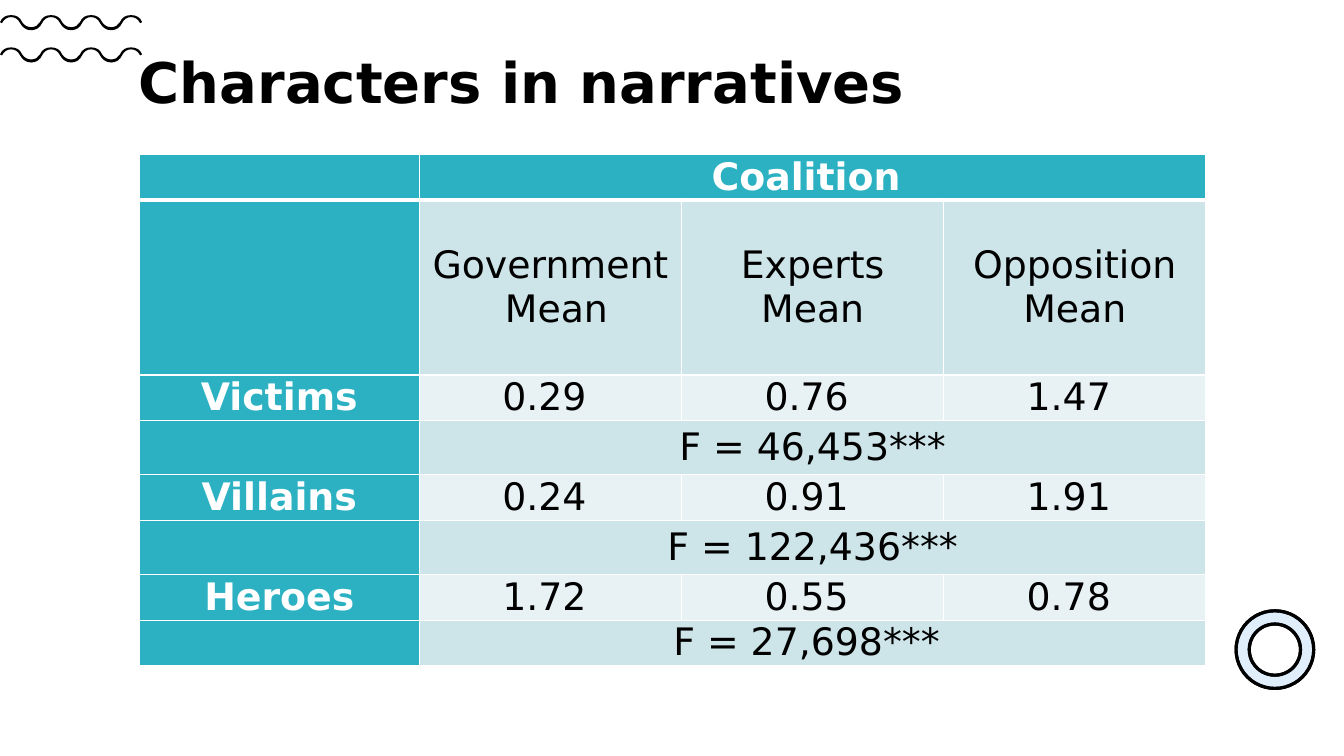
from lxml import etree
from pptx import Presentation
from pptx.dml.color import RGBColor
from pptx.enum.shapes import MSO_SHAPE
from pptx.enum.text import MSO_ANCHOR, PP_ALIGN
from pptx.oxml.ns import qn
from pptx.util import Inches, Pt

RECTANGLE, DONUT = MSO_SHAPE.RECTANGLE, MSO_SHAPE.DONUT
MIDDLE = MSO_ANCHOR.MIDDLE
CENTER = PP_ALIGN.CENTER

TITLE = "Characters in narratives"
GROUP_HEADING = "Coalition "
COALITIONS = ["Government\n Mean", "Experts\nMean", "Opposition\nMean"]
CHARACTERS = [
    ("Victims", ["0.29 ", "0.76 ", "1.47 "], "F = 46,453***"),
    ("Villains", ["0.24 ", "0.91 ", "1.91 "], "F = 122,436***"),
    ("Heroes", ["1.72 ", "0.55 ", "0.78 "], "F = 27,698*** "),
]

FONT = "DejaVu Sans"
WHITE, BLACK = "FFFFFF", "000000"
TEAL, BAND, PALE, RING_BLUE = "2CB1C3", "CDE4E9", "E8F2F5", "67A6EE"
TITLE_FORMAT = {"name": FONT, "size": Pt(40), "bold": True}
HEADING_FORMAT = {"name": FONT, "size": Pt(27), "bold": True}
BODY_FORMAT = {"name": FONT, "size": Pt(27), "bold": False}

SLIDE_SIZE = (13.33, 7.5)
TITLE_BOX = (1.28, 0.23, 11.5, 1.23)
TABLE_LEFT, TABLE_TOP = 1.38, 1.53
COLUMN_WIDTHS = [2.78, 2.6, 2.6, 2.6]
ROW_HEIGHTS = [0.43, 1.74, 0.43, 0.54, 0.43, 0.54, 0.43, 0.43]
RING_BOX = (12.26, 6.06, 0.77, 0.77)
RING_BAND = 0.17

WAVE_TOPS = [0.47, 0.15]
WAVE_REPEATS = 3
WAVE_PERIOD = (1.41 - 0.22) / WAVE_REPEATS
# One period of each edge: a start, then three Bézier points per quarter
UPPER_EDGE = [(0, 0.07), (0.02, 0.02), (0.06, 0), (0.11, 0),
              (0.16, 0), (0.2, 0.02), (0.22, 0.07),
              (0.24, 0.1), (0.27, 0.12), (0.31, 0.12),
              (0.35, 0.12), (0.38, 0.1)]
LOWER_EDGE = [(0.02, 0.08), (0.04, 0.04), (0.07, 0.02), (0.11, 0.02),
              (0.15, 0.02), (0.18, 0.04), (0.2, 0.08),
              (0.22, 0.12), (0.26, 0.15), (0.31, 0.15),
              (0.36, 0.15), (0.4, 0.12)]
CREST_POINTS = 7


def rgb(value):
    return RGBColor.from_string(value)


def paint(fill, color):
    fill.solid()
    fill.fore_color.rgb = rgb(color)


def write(frame, text, formats, color, **paragraph_formats):
    frame.text = text
    for paragraph in frame.paragraphs:
        for attribute, value in paragraph_formats.items():
            setattr(paragraph, attribute, value)
        for run in paragraph.runs:
            for attribute, value in formats.items():
                setattr(run.font, attribute, value)
            run.font.color.rgb = rgb(color)


def add_borders(cell, widths):
    """Draw white left, right, top and bottom borders of the given point widths."""
    properties = cell._tc.get_or_add_tcPr()
    for position, (side, width) in enumerate(zip("LRTB", widths)):
        border = etree.Element(qn(f"a:ln{side}"), w=str(Pt(width)))
        solid = etree.SubElement(border, qn("a:solidFill"))
        etree.SubElement(solid, qn("a:srgbClr"), val=WHITE)
        properties.insert(position, border)


def add_backdrop(slide):
    backdrop = slide.shapes.add_shape(RECTANGLE, 0, 0, *map(Inches, SLIDE_SIZE))
    backdrop.shadow.inherit = False
    paint(backdrop.fill, WHITE)
    backdrop.line.fill.background()


def add_title(slide):
    frame = slide.shapes.add_textbox(*map(Inches, TITLE_BOX)).text_frame
    frame.word_wrap = True
    frame.vertical_anchor = MIDDLE
    write(frame, TITLE, TITLE_FORMAT, BLACK, line_spacing=0.9)


def repeat_edge(edge, top):
    """Repeat one period of an edge and finish it with a last crest."""
    return [(Inches(x + repeat * WAVE_PERIOD), Inches(top + y))
            for repeat in range(WAVE_REPEATS + 1)
            for x, y in (edge if repeat < WAVE_REPEATS else edge[:CREST_POINTS])]


def join_curves(segments):
    """Turn every three straight segments into one cubic curve."""
    for first in range(0, len(segments), 3):
        triple = segments[first:first + 3]
        curve = etree.Element(qn("a:cubicBezTo"))
        triple[0].addprevious(curve)
        for segment in triple:
            curve.append(segment[0])
            segment.getparent().remove(segment)


def add_wave(slide, top):
    upper = repeat_edge(UPPER_EDGE, top)
    lower = repeat_edge(LOWER_EDGE, top)[::-1]
    builder = slide.shapes.build_freeform(*upper[0])
    builder.add_line_segments(upper[1:] + lower, close=True)
    wave = builder.convert_to_shape()
    segments = list(wave._element.iter(qn("a:lnTo")))
    end_cap = len(upper) - 1
    join_curves(segments[:end_cap])
    join_curves(segments[end_cap + 1:end_cap + len(lower)])
    wave.shadow.inherit = False
    paint(wave.fill, BLACK)
    wave.line.fill.background()


def add_ring(slide, color, opacity):
    ring = slide.shapes.add_shape(DONUT, *map(Inches, RING_BOX))
    ring.adjustments[0] = RING_BAND
    ring.shadow.inherit = False
    paint(ring.fill, color)
    if opacity < 100:
        tint = ring.fill._xPr.find(qn("a:solidFill"))[0]
        etree.SubElement(tint, qn("a:alpha"), val=str(opacity * 1000))
    ring.line.color.rgb = rgb(BLACK)
    ring.line.width = Pt(2.25)


def add_results(slide):
    rows = [["", GROUP_HEADING], ["", *COALITIONS]]
    for character, means, f_test in CHARACTERS:
        rows += [[character, *means], ["", f_test]]
    table = slide.shapes.add_table(
        len(rows), len(COLUMN_WIDTHS), Inches(TABLE_LEFT), Inches(TABLE_TOP),
        Inches(sum(COLUMN_WIDTHS)), Inches(sum(ROW_HEIGHTS))).table
    table.first_row = table.horz_banding = False
    for column, width in zip(table.columns, COLUMN_WIDTHS):
        column.width = Inches(width)
    for r, (texts, height) in enumerate(zip(rows, ROW_HEIGHTS)):
        table.rows[r].height = Inches(height)
        for c in range(len(COLUMN_WIDTHS)):
            cell = table.cell(r, c)
            heading = r == 0 or c == 0
            cell.margin_left = cell.margin_right = Inches(0.07)
            cell.margin_top = cell.margin_bottom = 0
            cell.vertical_anchor = MIDDLE
            paint(cell.fill, TEAL if heading else BAND if r % 2 else PALE)
            add_borders(cell, (1, 1, 1, 3 if r == 0 else 1))
            if c < len(texts):
                write(cell.text_frame, texts[c],
                      HEADING_FORMAT if heading else BODY_FORMAT,
                      WHITE if heading else BLACK, alignment=CENTER)
        if len(texts) == 2:
            table.cell(r, 1).merge(table.cell(r, len(COLUMN_WIDTHS) - 1))


def main():
    deck = Presentation()
    deck.slide_width, deck.slide_height = map(Inches, SLIDE_SIZE)
    slide = deck.slides.add_slide(deck.slide_layouts[6])
    add_backdrop(slide)
    add_title(slide)
    for top in WAVE_TOPS:
        add_wave(slide, top)
    for color, opacity in ((WHITE, 100), (RING_BLUE, 20)):
        add_ring(slide, color, opacity)
    add_results(slide)
    deck.save("out.pptx")


if __name__ == "__main__":
    main()
